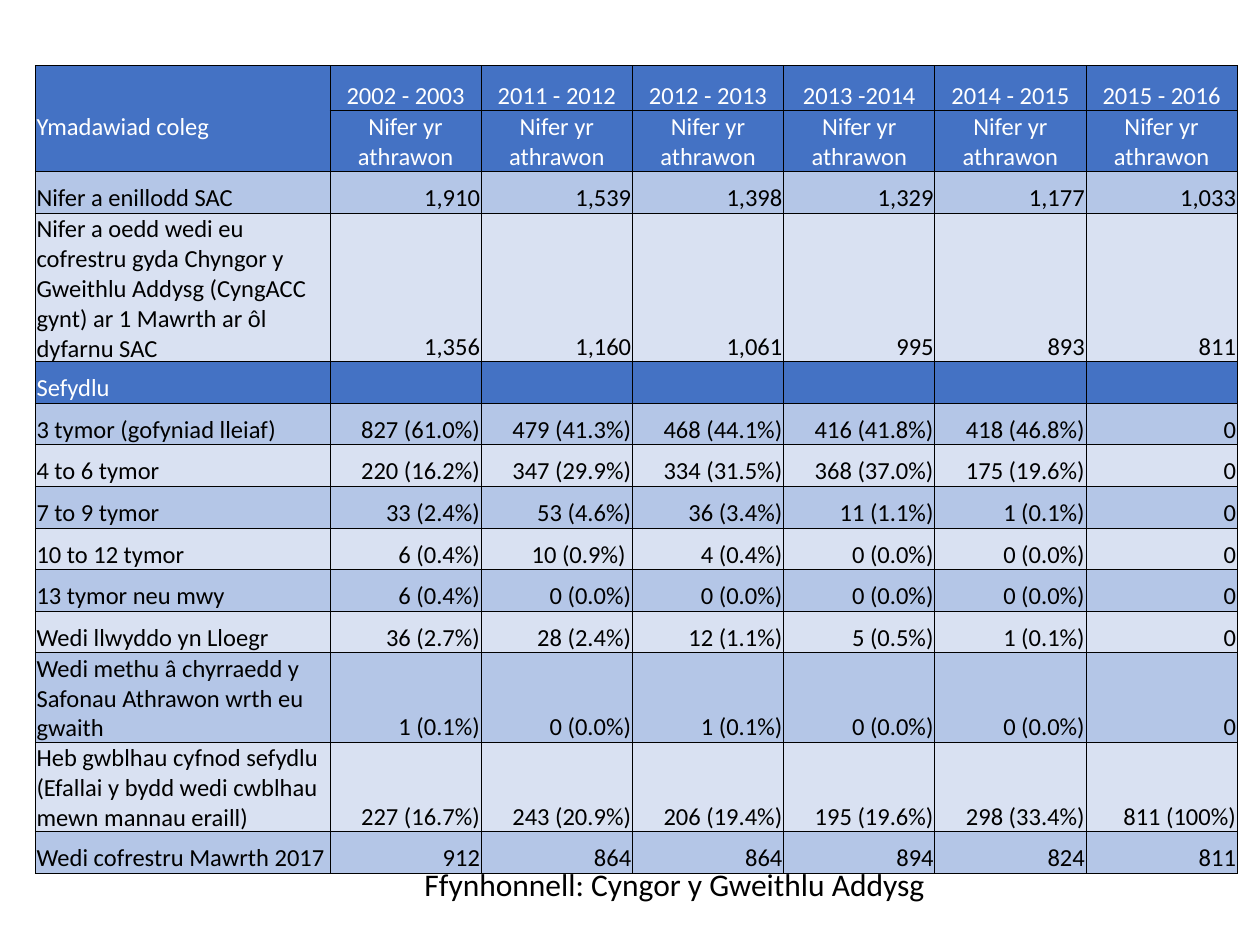
import pptx
import pptx.dml.color
import pptx.enum.text
import pptx.oxml
import pptx.oxml.ns
import pptx.util
from pptx.util import Inches

ALIGN = pptx.enum.text.PP_ALIGN
HEADER, DARK_BAND, LIGHT_BAND = "4472C4", "B4C6E7", "D9E1F2"
WHITE, BLACK = "FFFFFF", "000000"

YEARS = ["2002 - 2003", "2011 - 2012", "2012 - 2013",
         "2013 -2014", "2014 - 2015", "2015 - 2016"]
ROWS = [
    ["Ymadawiad coleg", *YEARS],
    [""] + ["Nifer yr athrawon"] * len(YEARS),
    ["Nifer a enillodd SAC", "1,910", "1,539", "1,398", "1,329", "1,177", "1,033"],
    ["Nifer a oedd wedi eu cofrestru gyda Chyngor y Gweithlu Addysg "
     "(CyngACC gynt) ar 1 Mawrth ar ôl dyfarnu SAC",
     "1,356", "1,160", "1,061", "995", "893", "811"],
    ["Sefydlu"] + [""] * len(YEARS),
    ["3 tymor (gofyniad lleiaf)", "827 (61.0%)", "479 (41.3%)", "468 (44.1%)",
     "416 (41.8%)", "418 (46.8%)", "0"],
    ["4 to 6 tymor", "220 (16.2%)", "347 (29.9%)", "334 (31.5%)",
     "368 (37.0%)", "175 (19.6%)", "0"],
    ["7 to 9 tymor", "33 (2.4%)", "53 (4.6%)", "36 (3.4%)",
     "11 (1.1%)", "1 (0.1%)", "0"],
    ["10 to 12 tymor", "6 (0.4%)", "10 (0.9%) ", "4 (0.4%)",
     "0 (0.0%)", "0 (0.0%)", "0"],
    ["13 tymor neu mwy", "6 (0.4%)", "0 (0.0%)", "0 (0.0%)",
     "0 (0.0%)", "0 (0.0%)", "0"],
    ["Wedi llwyddo yn Lloegr", "36 (2.7%)", "28 (2.4%)", "12 (1.1%)",
     "5 (0.5%)", "1 (0.1%)", "0"],
    ["Wedi methu â chyrraedd y Safonau Athrawon wrth eu gwaith", "1 (0.1%)",
     "0 (0.0%)", "1 (0.1%)", "0 (0.0%)", "0 (0.0%)", "0"],
    ["Heb gwblhau cyfnod sefydlu (Efallai y bydd wedi cwblhau mewn mannau eraill)",
     "227 (16.7%)", "243 (20.9%)", "206 (19.4%)", "195 (19.6%)",
     "298 (33.4%)", "811 (100%)"],
    ["Wedi cofrestru Mawrth 2017", "912", "864", "864", "894", "824", "811"],
]
HEADER_ROWS = (0, 1, 4)
COLUMN_WIDTHS = [2.34] + [1.2] * len(YEARS)
ROW_HEIGHTS = [0.36, 0.45, 0.33, 0.49] + [0.33] * 10


def color(value):
    return pptx.dml.color.RGBColor.from_string(value)


class SlideBuilder:
    font_name = "Calibri"

    def __init__(self, page):
        self.page = page

    def paragraph(self, para, text, size, text_color, align=ALIGN.LEFT):
        para.text = text
        para.alignment = align
        para.font.name = self.font_name
        para.font.size = pptx.util.Pt(size)
        para.font.color.rgb = color(text_color)

    def text(self, left, top, width, height, text, size):
        box = self.page.shapes.add_textbox(
            Inches(left), Inches(top), Inches(width), Inches(height))
        box.text_frame.word_wrap = True
        self.paragraph(box.text_frame.paragraphs[0], text, size, BLACK)

    def border(self, cell):
        """Draw a thin black line on all four sides; call before filling the cell."""
        properties = cell._tc.get_or_add_tcPr()
        for side in ("lnL", "lnR", "lnT", "lnB"):
            properties.append(pptx.oxml.parse_xml(
                f'<a:{side} {pptx.oxml.ns.nsdecls("a")} w="6350"><a:solidFill>'
                f'<a:srgbClr val="{BLACK}"/></a:solidFill></a:{side}>'))

    def cell(self, cell, text, fill, text_color, align):
        self.border(cell)
        cell.fill.solid()
        cell.fill.fore_color.rgb = color(fill)
        cell.margin_left = cell.margin_right = cell.margin_top = Inches(0.01)
        cell.margin_bottom = 0
        cell.vertical_anchor = pptx.enum.text.MSO_ANCHOR.BOTTOM
        self.paragraph(cell.text_frame.paragraphs[0], text, 14, text_color, align)

    def table(self, left, top, rows, widths, heights):
        table = self.page.shapes.add_table(
            len(rows), len(widths), Inches(left), Inches(top),
            Inches(sum(widths)), Inches(sum(heights))).table
        table.first_row = table.horz_banding = False
        for column, width in zip(table.columns, widths):
            column.width = Inches(width)
        for row, height in zip(table.rows, heights):
            row.height = Inches(height)
        for r, values in enumerate(rows):
            is_header = r in HEADER_ROWS
            # Bands restart after each header row.
            after_header = r - max(h for h in HEADER_ROWS if h <= r)
            band = DARK_BAND if after_header % 2 else LIGHT_BAND
            fill = HEADER if is_header else band
            text_color = WHITE if is_header else BLACK
            value_align = ALIGN.CENTER if is_header else ALIGN.RIGHT
            for c, value in enumerate(values):
                self.cell(table.cell(r, c), value, fill, text_color,
                          value_align if c else ALIGN.LEFT)
        return table


def main():
    deck = pptx.Presentation()
    deck.slide_width, deck.slide_height = Inches(10), Inches(7.5)
    builder = SlideBuilder(deck.slides.add_slide(deck.slide_layouts[6]))
    builder.text(3.27, 6.82, 5.67, 0.4, "Ffynhonnell: Cyngor y Gweithlu Addysg", 18)
    table = builder.table(0.28, 0.52, ROWS, COLUMN_WIDTHS, ROW_HEIGHTS)
    corner = table.cell(0, 0)
    corner.merge(table.cell(1, 0))
    corner.margin_bottom = Inches(0.24)
    deck.save("out.pptx")


if __name__ == "__main__":
    main()
